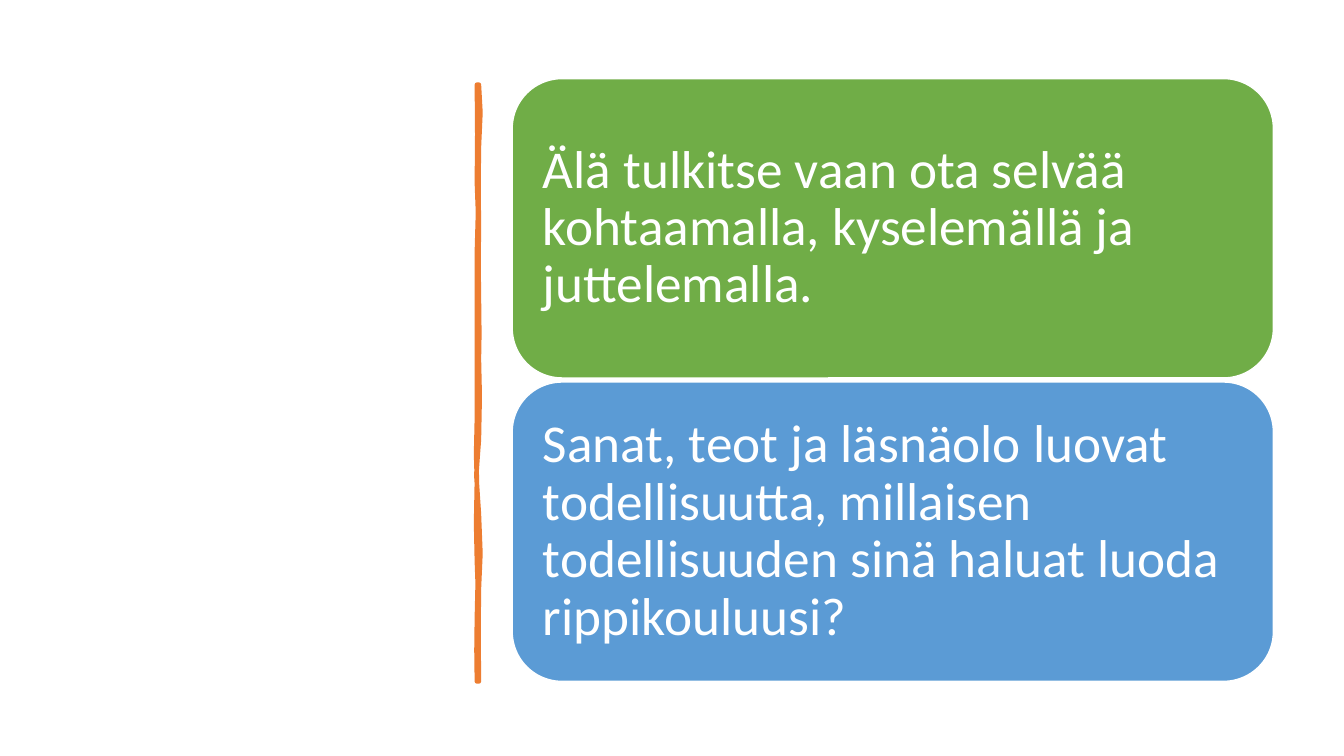
from dataclasses import dataclass

from pptx import Presentation
from pptx.dml.color import RGBColor
from pptx.enum.shapes import MSO_SHAPE as Preset
from pptx.enum.text import MSO_ANCHOR as Anchor, PP_ALIGN as Align
from pptx.util import Inches, Pt

FONT = "Calibri"
WHITE, ORANGE, BLUE, GREEN = "FFFFFF", "ED7D31", "5B9BD5", "70AD47"

CARD_LEFT, CARD_WIDTH, CARD_HEIGHT = 5.08, 7.55, 2.97
FIRST_TOP, CARD_STEP = 0.78, 3.01
UNITS_PER_INCH = 1000

Point = tuple[float, float]


@dataclass
class Card:
    row: int
    fill: str
    text: str


@dataclass
class Curve:
    """Cubic curve: two control points and an end point, in inches."""
    first: Point
    second: Point
    end: Point


CARDS = [
    Card(1, BLUE, "Sanat, teot ja läsnäolo luovat todellisuutta, millaisen "
                  "todellisuuden sinä haluat luoda rippikouluusi?"),
    Card(0, GREEN, "Älä tulkitse vaan ota selvää kohtaamalla, kyselemällä ja "
                   "juttelemalla."),
]

# Hand-drawn divider: down the right edge, then up the left edge
STROKE_START = (4.75, 0.84)
STROKE = [
    Curve((4.77, 1.02), (4.77, 1.19), (4.75, 1.46)),
    Curve((4.73, 1.73), (4.76, 1.95), (4.75, 2.26)),
    Curve((4.74, 2.57), (4.75, 2.62), (4.75, 2.94)),
    Curve((4.74, 3.25), (4.77, 3.42), (4.75, 3.56)),
    Curve((4.73, 3.70), (4.79, 4.14), (4.75, 4.36)),
    Curve((4.71, 4.57), (4.72, 4.84), (4.75, 5.10)),
    Curve((4.77, 5.36), (4.77, 5.64), (4.75, 5.84)),
    Curve((4.73, 6.03), (4.76, 6.50), (4.75, 6.76)),
    Curve((4.74, 6.76), (4.73, 6.76), (4.73, 6.76)),
    Curve((4.74, 6.46), (4.71, 6.44), (4.73, 6.13)),
    Curve((4.74, 5.83), (4.74, 5.70), (4.73, 5.57)),
    Curve((4.72, 5.44), (4.72, 4.95), (4.73, 4.77)),
    Curve((4.73, 4.59), (4.71, 4.45), (4.73, 4.15)),
    Curve((4.74, 3.86), (4.72, 3.73), (4.73, 3.35)),
    Curve((4.74, 2.98), (4.72, 2.81), (4.73, 2.50)),
    Curve((4.74, 2.18), (4.75, 2.00), (4.73, 1.81)),
    Curve((4.70, 1.63), (4.77, 1.04), (4.73, 0.84)),
]


def color(value: str) -> RGBColor:
    return RGBColor.from_string(value)


def paint(shape, fill: str, line: str, width: float) -> None:
    shape.shadow.inherit = False
    shape.fill.solid()
    shape.fill.fore_color.rgb = color(fill)
    shape.line.color.rgb = color(line)
    shape.line.width = Pt(width)


def midpoint(start: Point, curve: Curve) -> Point:
    x, y = ((a + 3 * b + 3 * c + d) / 8
            for a, b, c, d in zip(start, curve.first, curve.second, curve.end))
    return x, y


def draw_divider(page) -> None:
    outline = [STROKE_START]
    for curve in STROKE:
        outline += [midpoint(outline[-1], curve), curve.end]
    start, *points = [(x * UNITS_PER_INCH, y * UNITS_PER_INCH) for x, y in outline]
    builder = page.shapes.build_freeform(*start, scale=Inches(1) / UNITS_PER_INCH)
    builder.add_line_segments(points, close=True)
    paint(builder.convert_to_shape(), ORANGE, ORANGE, 3.25)


def draw_card(page, card: Card) -> None:
    box = page.shapes.add_shape(
        Preset.ROUNDED_RECTANGLE,
        Inches(CARD_LEFT), Inches(FIRST_TOP + card.row * CARD_STEP),
        Inches(CARD_WIDTH), Inches(CARD_HEIGHT))
    paint(box, card.fill, WHITE, 1)

    frame = box.text_frame
    frame.word_wrap = True
    frame.vertical_anchor = Anchor.MIDDLE
    frame.margin_left = frame.margin_right = Inches(0.16)
    frame.margin_top = frame.margin_bottom = Inches(0.16)
    para = frame.paragraphs[0]
    para.alignment = Align.LEFT
    para.line_spacing = 0.9
    span = para.add_run()
    span.text = card.text
    span.font.name = FONT
    span.font.size = Pt(38)
    span.font.color.rgb = color(WHITE)


def main() -> None:
    deck = Presentation()
    deck.slide_width, deck.slide_height = Inches(13.33), Inches(7.5)
    page = deck.slides.add_slide(deck.slide_layouts[6])

    draw_divider(page)
    for card in CARDS:
        draw_card(page, card)

    deck.save("out.pptx")


if __name__ == "__main__":
    main()
